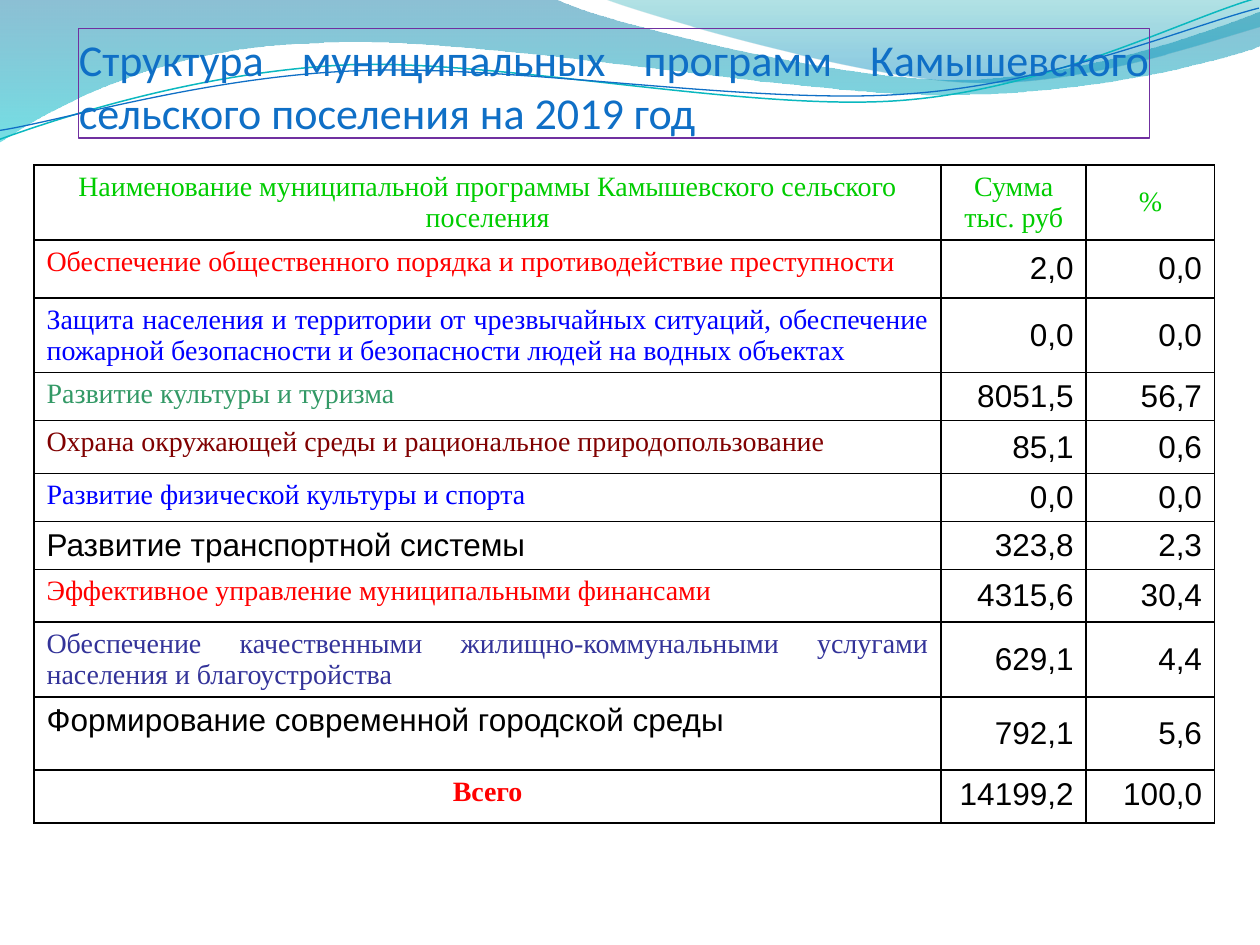
from lxml.etree import SubElement
from pptx import Presentation
from pptx.dml.color import RGBColor
from pptx.enum.text import MSO_ANCHOR, MSO_AUTO_SIZE, PP_ALIGN
from pptx.oxml.ns import qn
from pptx.util import Inches, Pt

COLORS = {
    "blue": "0F6FC6", "teal": "0AB8BF", "purple": "7030A0", "black": "000000",
    "green": "00CC00", "red": "FF0000", "bright blue": "0000FF",
    "sea green": "339966", "maroon": "800000", "indigo": "333399",
    "deep blue": "0074A1", "aqua": "00C6CF", "dark aqua": "00A1A9", "sky": "008BBF",
}
UNITS = 1000  # freeform units per inch


def draw_wave(shapes, start, segments, closed):
    """Draw a wave; a segment is one point (line) or three points (Bezier curve)."""
    points = [start] + [point for segment in segments for point in segment]
    scaled = [(round(x * UNITS), round(y * UNITS)) for x, y in points]
    builder = shapes.build_freeform(*scaled[0], scale=Inches(1) / UNITS)
    builder.add_line_segments(scaled[1:], close=closed)
    wave = builder.convert_to_shape()
    wave.shadow.inherit = False
    # Join each group of three straight steps into one curve
    outline = next(wave.element.iter(qn("a:path")))
    steps = iter(outline.findall(qn("a:lnTo")))
    for segment in segments:
        first, *others = [next(steps) for _ in segment]
        if others:
            curve = first.makeelement(qn("a:cubicBezTo"))
            first.addprevious(curve)
            for step in (first, *others):
                curve.append(step[0])
                outline.remove(step)
    return wave


def format_text(paragraph, size, font, color, alignment, bold=False):
    paragraph.alignment = alignment
    for run in paragraph.runs:
        run.font.size = Pt(size)
        run.font.name = font
        run.font.bold = bold
        run.font.color.rgb = RGBColor.from_string(COLORS[color])


presentation = Presentation()
presentation.slide_width, presentation.slide_height = Inches(10), Inches(7.5)
width, height = presentation.slide_width, presentation.slide_height
slide = presentation.slides.add_slide(presentation.slide_layouts[5])

# Gradient waves: start, segments, stops as (colour, opacity in percent, position)
filled_waves = [
    ((0, 0),
     [[(4.4, -0.01)],
      [(4.76, 0.17), (6.64, 0.63), (7.58, 0.63)],
      [(8.53, 0.63), (9.58, 0.26), (10, 0.09)],
      [(10.01, 0.36)],
      [(9.83, 0.44), (8.7, 0.76), (7.46, 0.75)],
      [(6.22, 0.75), (3.82, 0.28), (2.57, 0.34)],
      [(1.29, 0.36), (0.46, 0.83), (-0.01, 1.13)],
      [(0, 0)]],
     [("deep blue", 45, 0), ("aqua", 55, 1)]),
    ((4.79, -0.01),
     [[(5.09, 0.11), (6.82, 0.62), (7.69, 0.65)],
      [(8.56, 0.69), (9.61, 0.32), (10, 0.21)],
      [(10, 0)],
      [(4.79, -0.01)]],
     [("dark aqua", 30, 0), ("sky", 45, 0.8)]),
]
for start, segments, stops in filled_waves:
    wave = draw_wave(slide.shapes, start, segments, closed=True)
    wave.line.fill.background()
    wave.fill.gradient()
    wave.fill.gradient_angle = 270
    for stop, (color, opacity, position) in zip(wave.fill.gradient_stops, stops):
        stop.color.rgb = RGBColor.from_string(COLORS[color])
        stop.position = position
    for rgb, (color, opacity, position) in zip(wave.element.spPr.iter(qn("a:srgbClr")), stops):
        SubElement(rgb, qn("a:alpha"), val=str(opacity * 1000))

# Thin wave lines, slightly turned
line_waves = [
    ((-0.02, 0.87),
     [[(0.47, 0.72), (1.58, 0.41), (2.77, 0.41)],
      [(3.96, 0.42), (5.91, 0.93), (7.12, 0.9)],
      [(8.32, 0.87), (9.4, 0.36), (10, 0.22)]], "teal", 0.85),
    ((-0.02, 0.8),
     [[(0.46, 0.75), (1.64, 0.45), (2.83, 0.46)],
      [(4.03, 0.46), (5.96, 0.88), (7.16, 0.85)],
      [(8.35, 0.83), (9.43, 0.42), (10.01, 0.3)]], "blue", 0.75),
]
for start, segments, color, weight in line_waves:
    wave = draw_wave(slide.shapes, start, segments, closed=False)
    wave.rotation = 357.3
    wave.fill.background()
    wave.line.color.rgb = RGBColor.from_string(COLORS[color])
    wave.line.width = Pt(weight)

# Title, brought in front of the waves
title = slide.shapes.title
title.element.getparent().append(title.element)
title.left, title.top = width // 16, int(height * 0.03)
title.width, title.height = int(width * 0.85), int(height * 0.116)
title.fill.background()
title.line.color.rgb = RGBColor.from_string(COLORS["purple"])
title.line.width = Pt(0.75)
frame = title.text_frame
frame.text = "Структура муниципальных программ Камышевского сельского поселения на 2019 год"
frame.word_wrap = True
frame.auto_size = MSO_AUTO_SIZE.NONE
frame.vertical_anchor = MSO_ANCHOR.BOTTOM
frame.margin_left = frame.margin_right = frame.margin_bottom = 0
frame.margin_top = Inches(0.05)
format_text(frame.paragraphs[0], 25.2, "Calibri", "blue", PP_ALIGN.JUSTIFY)

# Programme table: row height, name, name colour, sum, share
SERIF, SANS = (16, "Times New Roman"), (18, "Arial")
programmes = [
    (0.57, "Наименование муниципальной программы Камышевского сельского поселения",
     "green", "Сумма тыс. руб", "%"),
    (0.46, "Обеспечение общественного порядка и противодействие преступности",
     "red", "2,0", "0,0"),
    (0.55, "Защита населения и территории от чрезвычайных ситуаций, обеспечение "
     "пожарной безопасности и безопасности людей на водных объектах",
     "bright blue", "0,0", "0,0"),
    (0.31, "Развитие культуры и туризма", "sea green", "8051,5", "56,7"),
    (0.42, "Охрана окружающей среды и рациональное природопользование",
     "maroon", "85,1", "0,6"),
    (0.2, "Развитие физической культуры и спорта", "bright blue", "0,0", "0,0"),
    (0.2, "Развитие транспортной системы", "black", "323,8", "2,3"),
    (0.42, "Эффективное управление муниципальными финансами", "red", "4315,6", "30,4"),
    (0.58, "Обеспечение качественными жилищно-коммунальными услугами населения "
     "и благоустройства", "indigo", "629,1", "4,4"),
    (0.58, "Формирование современной городской среды", "black", "792,1", "5,6"),
    (0.42, "Всего", "red", "14199,2", "100,0"),
]
column_widths = [7.2, 1.15, 1.02]
last = len(programmes) - 1
table_frame = slide.shapes.add_table(
    len(programmes), len(column_widths), Inches(0.27), Inches(1.31),
    Inches(sum(column_widths)), int(height * 0.72))
table = table_frame.table
table.first_row = table.horz_banding = False
for column, column_width in zip(table.columns, column_widths):
    column.width = Inches(column_width)

for row, (row_height, name, color, *values) in enumerate(programmes):
    table.rows[row].height = Inches(row_height)
    for column, text in enumerate([name, *values]):
        cell = table.cell(row, column)
        cell.text_frame.text = text
        paragraph = cell.text_frame.paragraphs[0]
        if column and row < last:
            cell.vertical_anchor = MSO_ANCHOR.MIDDLE
        if row == 0:
            format_text(paragraph, *SERIF, color, PP_ALIGN.CENTER)
        elif column:
            format_text(paragraph, *SANS, "black", PP_ALIGN.RIGHT)
        else:
            font = SANS if color == "black" else SERIF
            alignment = PP_ALIGN.CENTER if row == last else PP_ALIGN.JUSTIFY
            format_text(paragraph, *font, color, alignment, bold=row == last)

        # Black cell borders, no fill
        properties = cell._tc.get_or_add_tcPr()
        for side in ("a:lnL", "a:lnR", "a:lnT", "a:lnB"):
            border = SubElement(properties, qn(side), w=str(Pt(1)))
            fill = SubElement(border, qn("a:solidFill"))
            SubElement(fill, qn("a:srgbClr"), val=COLORS["black"])
        cell.fill.background()

# The frame keeps its own height, apart from the sum of the rows
table_frame.height = int(height * 0.72)

presentation.save("out.pptx")
